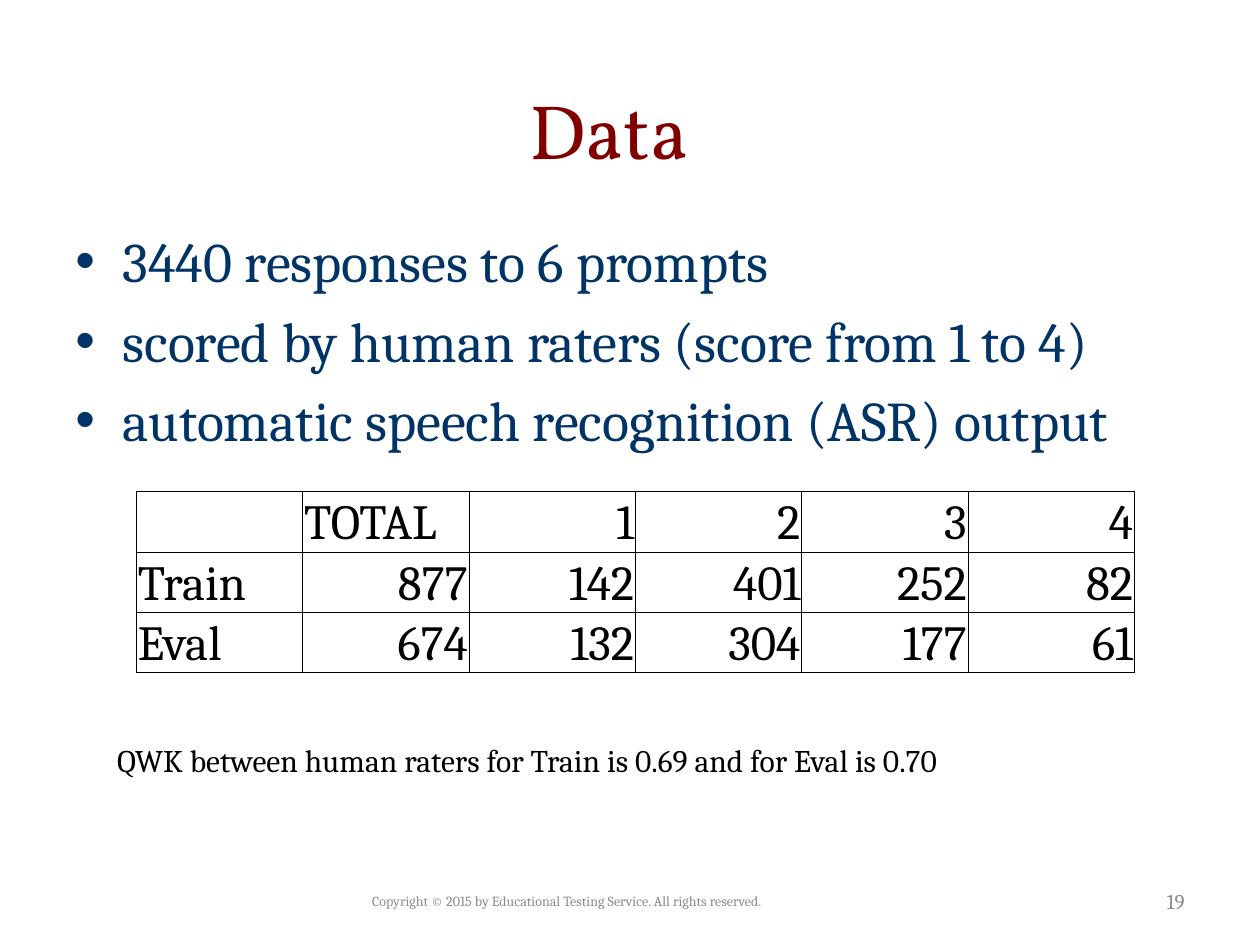
from lxml.etree import SubElement
from pptx import Presentation
from pptx.dml.color import RGBColor
from pptx.enum.text import MSO_ANCHOR, PP_ALIGN
from pptx.oxml.ns import qn
from pptx.util import Cm, Pt


def color(value):
    return RGBColor.from_string(value)


def write(paragraph, text, size, ink, align=PP_ALIGN.LEFT, font="Cambria"):
    paragraph.alignment = align
    span = paragraph.add_run()
    span.text = text
    for name, value in {"name": font, "size": Pt(size)}.items():
        setattr(span.font, name, value)
    span.font.color.rgb = color(ink)


deck = Presentation()
deck.slide_width, deck.slide_height = Cm(25.4), Cm(19.05)
page = deck.slides.add_slide(deck.slide_layouts[6])

# Title, footer, page number and note
copyright_line = "Copyright © 2015 by Educational Testing Service. All rights reserved."
agreement = "QWK between human raters for Train is 0.69 and for Eval is 0.70"
middle, top = MSO_ANCHOR.MIDDLE, MSO_ANCHOR.TOP
labels = [
    ((1.27, 1.27, 22.02, 2.67), middle, ("Data", 44, "800000", PP_ALIGN.CENTER, "Vollkorn")),
    ((5.72, 17.65, 11.43, 1.02), middle, (copyright_line, 8, "8C8C8C", PP_ALIGN.CENTER)),
    ((18.21, 17.65, 5.92, 1.02), middle, ("19", 12, "8C8C8C", PP_ALIGN.RIGHT)),
    ((2.11, 14.81, 20.75, 1.02), top, (agreement, 18, "000000")),
]
for place, anchor, content in labels:
    frame = page.shapes.add_textbox(*map(Cm, place)).text_frame
    frame.word_wrap = True
    frame.vertical_anchor = anchor
    write(frame.paragraphs[0], *content)

# Bulleted facts
facts = [
    "3440 responses to 6 prompts",
    "scored by human raters (score from 1 to 4)",
    "automatic speech recognition (ASR) output",
]
body = page.shapes.add_textbox(Cm(1.27), Cm(4.45), Cm(22.86), Cm(5.72)).text_frame
body.word_wrap = True
for index, fact in enumerate(facts):
    paragraph = body.add_paragraph() if index else body.paragraphs[0]
    properties = paragraph._p.get_or_add_pPr()
    properties.set("marL", str(Cm(0.95)))
    properties.set("indent", str(-Cm(0.95)))
    SubElement(properties, qn("a:buFont"), typeface="Arial")
    SubElement(properties, qn("a:buChar"), char="•")
    if index:
        paragraph.space_before = Pt(7)
    write(paragraph, fact, 32, "003366")

# Score counts
scores = [
    ["", "TOTAL", "1", "2", "3", "4"],
    ["Train", "877", "142", "401", "252", "82"],
    ["Eval", "674", "132", "304", "177", "61"],
]
table = page.shapes.add_table(3, 6, Cm(2.75), Cm(9.91), Cm(20.12), Cm(3.51)).table
table.first_row = table.horz_banding = False
cell_format = {
    "vertical_anchor": MSO_ANCHOR.BOTTOM,
    "margin_left": Cm(0.03),
    "margin_right": Cm(0.03),
    "margin_top": Cm(0.03),
    "margin_bottom": Cm(0),
}
for row, values in zip(table.rows, scores):
    row.height = Cm(1.17)
    for cell, value in zip(row.cells, values):
        for name, setting in cell_format.items():
            setattr(cell, name, setting)
        properties = cell._tc.get_or_add_tcPr()
        for side in ("lnL", "lnR", "lnT", "lnB"):
            border = SubElement(properties, qn(f"a:{side}"), w=str(Pt(0.5)))
            fill = SubElement(border, qn("a:solidFill"))
            SubElement(fill, qn("a:srgbClr"), val="000000")
        cell.fill.background()
        if value:
            align = PP_ALIGN.RIGHT if value.isdigit() else PP_ALIGN.LEFT
            write(cell.text_frame.paragraphs[0], value, 28, "000000", align)

deck.save("out.pptx")
